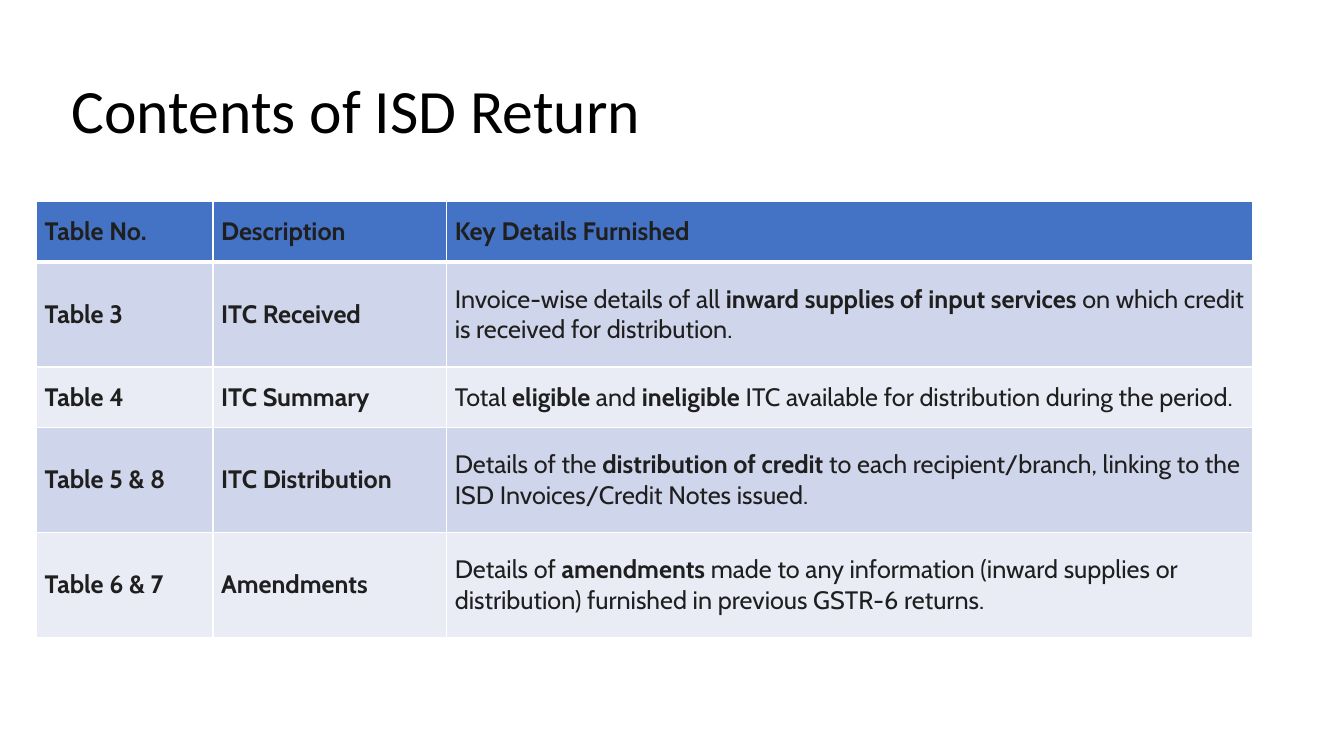
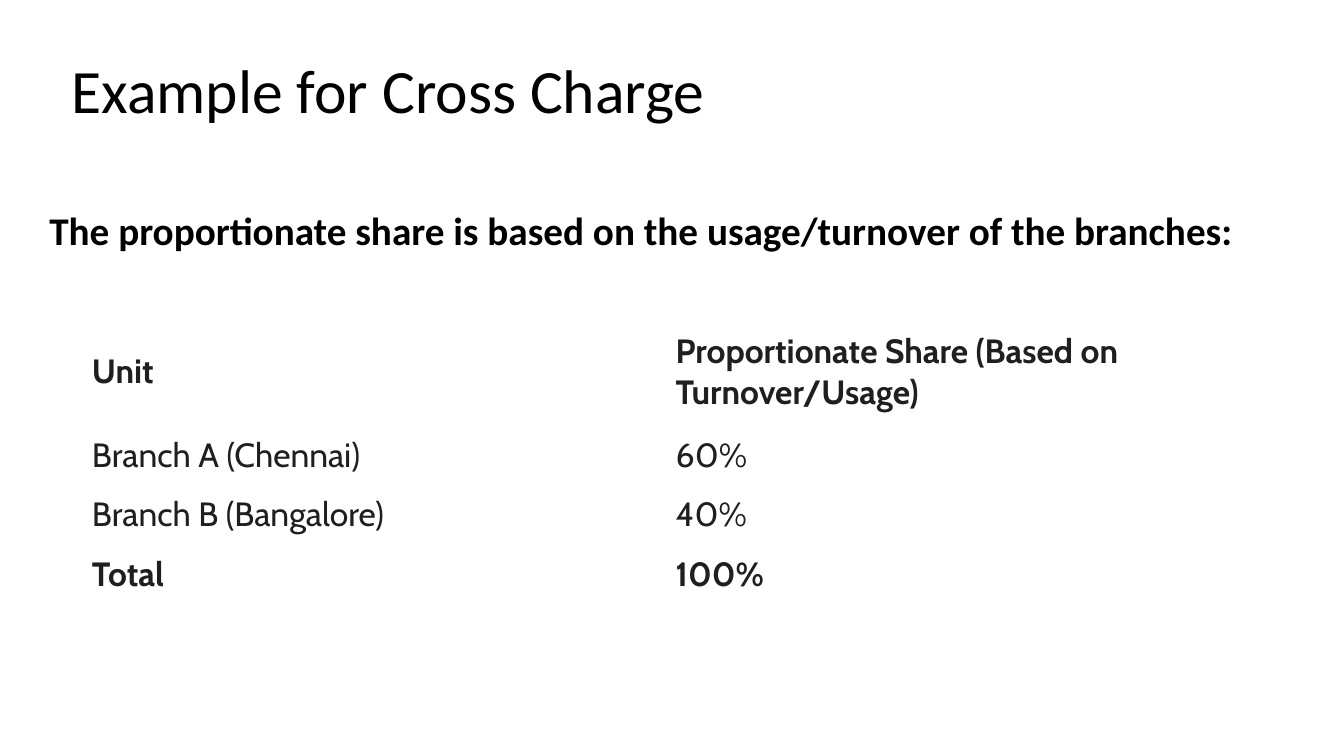
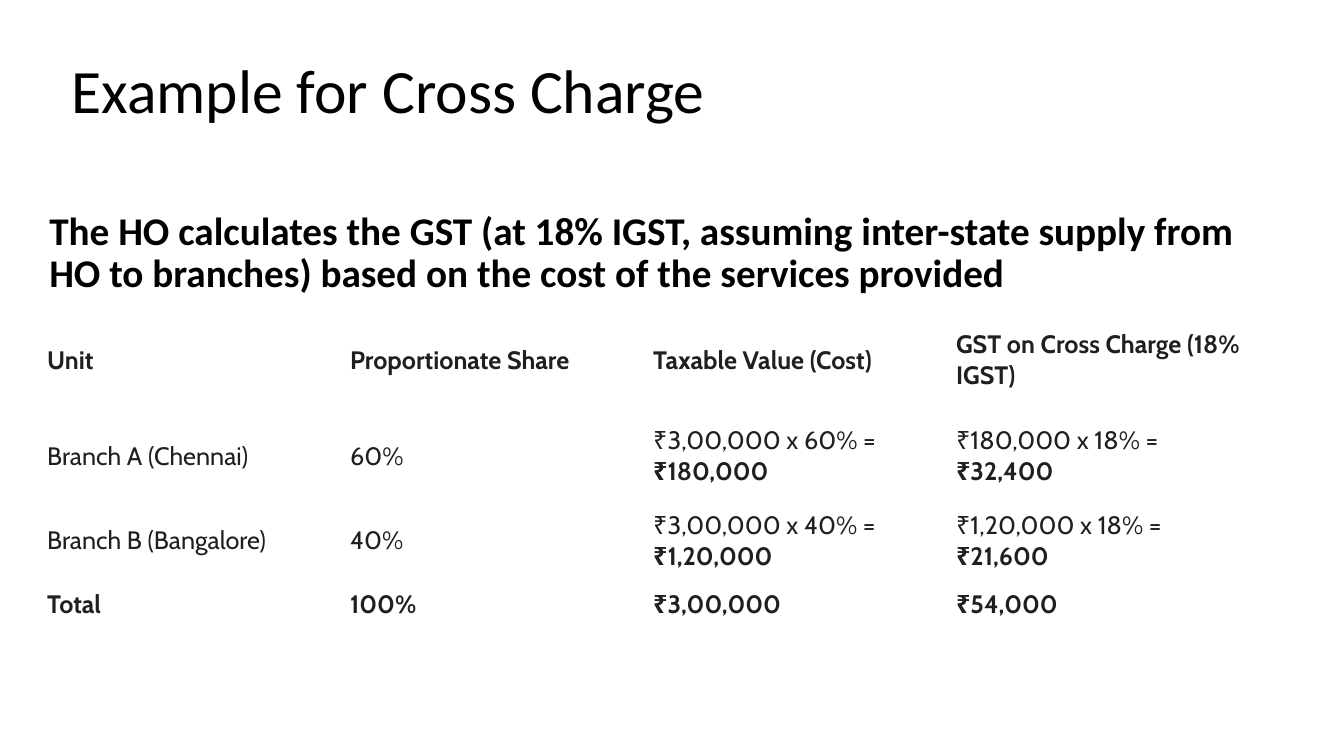
"""Build three slides on the ISD return and cross charging."""
from dataclasses import dataclass
from typing import Optional

from lxml import etree
from pptx import Presentation
from pptx.dml.color import RGBColor
from pptx.enum import text
from pptx.oxml import ns
from pptx.util import Pt

BLACK, INK, WHITE = "000000", "1F1F1F", "FFFFFF"
HEADER, BANDS = "4472C4", ("CFD5EA", "E9EBF5")
TITLE_ONLY, TITLE_AND_BODY = 5, 1
INSET_X, INSET_Y = 5.7, 4.3


@dataclass(frozen=True)
class Grid:
    left: float
    top: float
    cols: list[float]
    rows: list[float]
    size: float
    cells: list[list[str]]
    border: float = 0.5
    banded: bool = False


@dataclass(frozen=True)
class Page:
    title: str
    title_height: float
    grid: Grid
    lead: str = ""
    lead_height: float = 0


PAGES = [
    Page("Contents of ISD Return", 104.4, Grid(
        26.2, 144, [126, 167, 575.3], [43.2, 74.9, 43.2, 74.9, 74.9], 18, [
            ["**Table No.**", "**Description**", "**Key Details Furnished**"],
            ["**Table 3**", "**ITC Received**",
             "Invoice-wise details of all **inward supplies of input services** "
             "on which credit is received for distribution."],
            ["**Table 4**", "**ITC Summary**",
             "Total **eligible** and **ineligible** ITC available for "
             "distribution during the period."],
            ["**Table 5 & 8**", "**ITC Distribution**",
             "Details of the **distribution of credit** to each recipient/branch, "
             "linking to the ISD Invoices/Credit Notes issued."],
            ["**Table 6 & 7**", "**Amendments**",
             "Details of **amendments** made to any information (inward supplies "
             "or distribution) furnished in previous GSTR-6 returns."],
        ], border=1, banded=True)),
    Page("Example for Cross Charge", 76.3, Grid(
        60, 227.5, [417] * 2, [76.3] + [42.7] * 3, 24, [
            ["**Unit**", "**Proportionate Share (Based on Turnover/Usage)**"],
            ["Branch A (Chennai)", "60%"],
            ["Branch B (Bangalore)", "40%"],
            ["**Total**", "**100%**"],
        ]),
        "The proportionate share is based on the usage/turnover of the branches:",
        38.2),
    Page("Example for Cross Charge", 76.3, Grid(
        28, 223.2, [216.4] * 4, [68.4] * 2 + [39.6] * 2, 18, [
            ["**Unit**", "**Proportionate Share**", "**Taxable Value (Cost)**",
             "**GST on Cross Charge (18% IGST)**"],
            ["Branch A (Chennai)", "60%", "₹3,00,000 x 60% = **₹180,000**",
             "₹180,000 x 18% = **₹32,400**"],
            ["Branch B (Bangalore)", "40%", "₹3,00,000 x 40% =\n**₹1,20,000**",
             "₹1,20,000 x 18% = **₹21,600**"],
            ["**Total**", "**100%**", "**₹3,00,000**", "**₹54,000**"],
        ]),
        "The HO calculates the GST (at 18% IGST, assuming inter-state supply from "
        "HO to branches) based on the cost of the services provided", 68.4),
]


def rgb(value: str) -> RGBColor:
    """Return the colour for a hex string."""
    return RGBColor.from_string(value)


def set_font(font, name: str, size: float, color: str,
             bold: Optional[bool] = None) -> None:
    """Set the face, size, colour and weight of a font."""
    font.name, font.size, font.bold = name, Pt(size), bold
    font.color.rgb = rgb(color)


def place(sp, left: float, top: float, width: float, height: float) -> None:
    """Move and size a shape, in points."""
    sp.left, sp.top, sp.width, sp.height = map(Pt, (left, top, width, height))


def write_placeholder(sp, content: str, size: float, bold: bool):
    """Fill a placeholder with one left-aligned paragraph and return it."""
    tf = sp.text_frame
    tf.text = content
    p = tf.paragraphs[0]
    p.alignment, p.line_spacing = text.PP_ALIGN.LEFT, 0.9
    set_font(p.font, "Calibri", size, BLACK, bold)
    return p


def add_title(slide, page: Page) -> None:
    """Write the slide title."""
    sp = slide.shapes.title
    place(sp, 43.9, 28.8, 877.7, page.title_height)
    sp.text_frame.vertical_anchor = text.MSO_ANCHOR.MIDDLE
    write_placeholder(sp, page.title, 44, False)


def add_lead(slide, page: Page) -> None:
    """Write the bold lead sentence without a bullet."""
    sp = slide.placeholders[1]
    place(sp, 28, 147.6, 893.5, page.lead_height)
    sp.text_frame.auto_size = text.MSO_AUTO_SIZE.SHAPE_TO_FIT_TEXT
    p = write_placeholder(sp, page.lead, 28, True)
    p.space_before = Pt(10)
    props = p._p.get_or_add_pPr()
    props.set("marL", "0")
    props.set("indent", "0")
    bullet = etree.Element(ns.qn("a:buNone"))
    props.find(ns.qn("a:defRPr")).addprevious(bullet)


def write_cell(cell, content: str, size: float) -> None:
    """Write text whose bold parts stand between double asterisks."""
    tf = cell.text_frame
    for i, line in enumerate(content.split("\n")):
        p = tf.add_paragraph() if i else tf.paragraphs[0]
        set_font(p.font, "Cabin", size, INK)
        for j, part in enumerate(line.split("**")):
            if part:
                r = p.add_run()
                r.text, r.font.bold = part, j % 2 == 1


def add_borders(cell, width: float, bottom: float) -> None:
    """Draw white lines on the four sides of a cell."""
    props = cell._tc.get_or_add_tcPr()
    sides = (("a:lnL", width), ("a:lnR", width), ("a:lnT", width), ("a:lnB", bottom))
    for i, (tag, points) in enumerate(sides):
        line = etree.Element(ns.qn(tag), w=str(Pt(points)))
        fill = etree.SubElement(line, ns.qn("a:solidFill"))
        etree.SubElement(fill, ns.qn("a:srgbClr"), val=WHITE)
        props.insert(i, line)


def add_grid(slide, grid: Grid) -> None:
    """Add a table with its fills, borders and text."""
    table = slide.shapes.add_table(
        len(grid.rows), len(grid.cols), Pt(grid.left), Pt(grid.top),
        Pt(sum(grid.cols)), Pt(sum(grid.rows))).table
    table.first_row, table.horz_banding = grid.banded, grid.banded
    for col, width in zip(table.columns, grid.cols):
        col.width = Pt(width)
    for i, (row, height) in enumerate(zip(table.rows, grid.rows)):
        row.height = Pt(height)
        for cell, content in zip(row.cells, grid.cells[i]):
            cell.margin_left = cell.margin_right = Pt(INSET_X)
            cell.margin_top = cell.margin_bottom = Pt(INSET_Y)
            cell.vertical_anchor = text.MSO_ANCHOR.MIDDLE
            if grid.banded:
                cell.fill.solid()
                cell.fill.fore_color.rgb = rgb(BANDS[(i - 1) % 2] if i else HEADER)
            else:
                cell.fill.background()
            heavy = grid.banded and i == 0
            add_borders(cell, grid.border, 3 if heavy else grid.border)
            write_cell(cell, content, grid.size)


def main() -> None:
    """Build and save the presentation."""
    prs = Presentation()
    prs.slide_width, prs.slide_height = Pt(960), Pt(540)
    for page in PAGES:
        layout = TITLE_AND_BODY if page.lead else TITLE_ONLY
        slide = prs.slides.add_slide(prs.slide_layouts[layout])
        add_title(slide, page)
        if page.lead:
            add_lead(slide, page)
        add_grid(slide, page.grid)
    prs.save("out.pptx")


if __name__ == "__main__":
    main()
